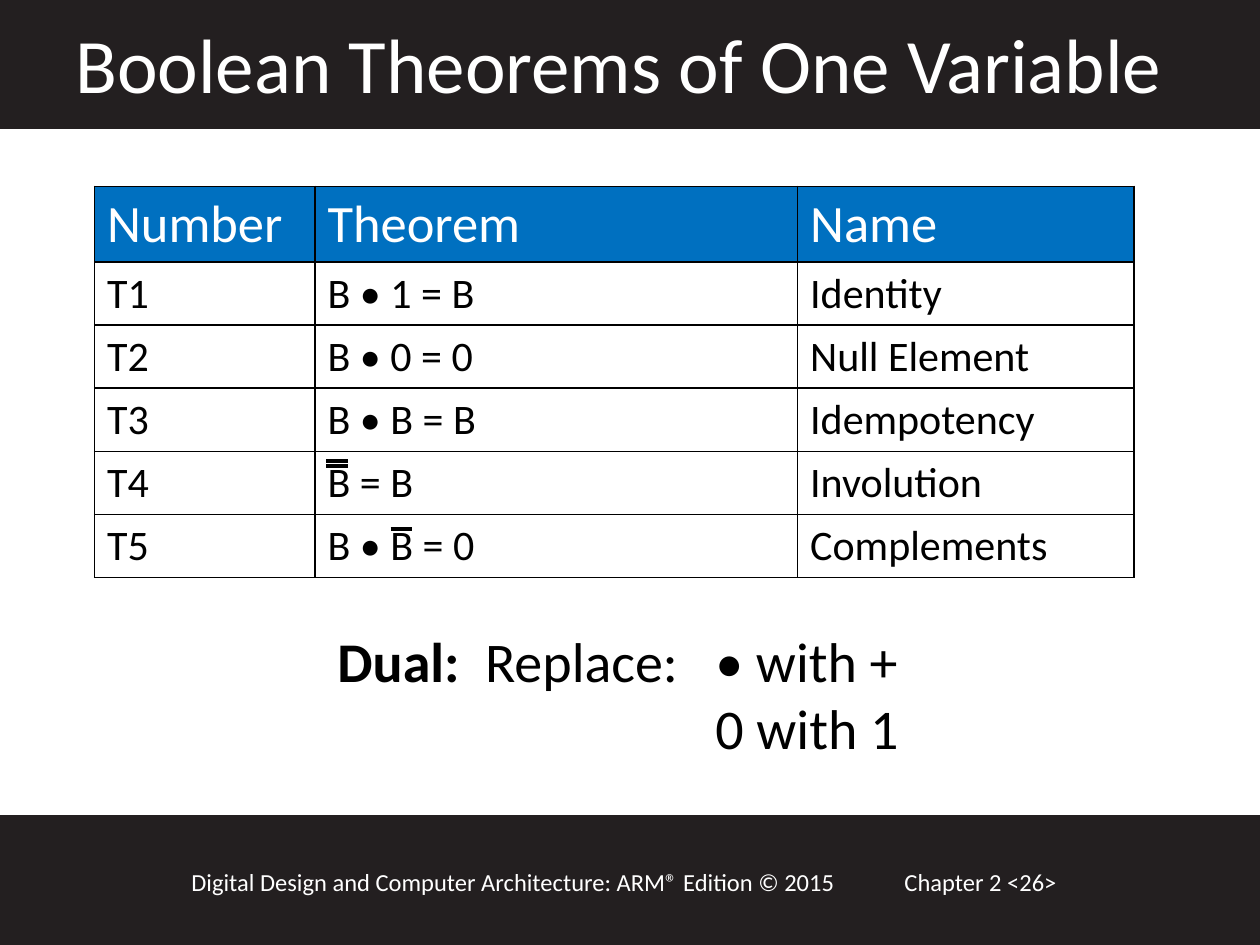
from lxml import etree
from pptx import Presentation
from pptx import util as u
from pptx.dml.color import RGBColor
from pptx.enum import shapes, text
from pptx.oxml import ns

WIDTH, HEIGHT = u.Inches(10), u.Inches(7.5)
FONT = "Calibri"
BLACK, WHITE, BAND, HEADER = "000000", "FFFFFF", "231F20", "0070C0"
THEOREMS = [
    ("Number", "Theorem", "Name"),
    ("T1", "B • 1 = B", "Identity"),
    ("T2", "B • 0 = 0", "Null Element"),
    ("T3", "B • B = B", "Idempotency"),
    ("T4", "B = B", "Involution"),
    ("T5", "B • B = 0", "Complements"),
]


def color(value):
    """Turn a hex string into a colour."""
    return RGBColor.from_string(value)


def across(percent):
    """Give a share of the slide width."""
    return u.Emu(round(WIDTH * percent / 100))


def down(percent):
    """Give a share of the slide height."""
    return u.Emu(round(HEIGHT * percent / 100))


def area(left, top, width, height):
    """Turn slide percentages into a position and size."""
    return across(left), down(top), across(width), down(height)


def style(paragraph, size, ink):
    """Format every run of a paragraph."""
    for run in paragraph.runs:
        run.font.name = FONT
        run.font.size = u.Pt(size)
        run.font.bold = False
        run.font.color.rgb = color(ink)


def add_band(slide, top, height):
    """Add a dark band over the full slide width."""
    band = slide.shapes.add_shape(shapes.MSO_SHAPE.RECTANGLE, *area(0, top, 100, height))
    band.shadow.inherit = False
    band.fill.solid()
    band.fill.fore_color.rgb = color(BAND)
    band.line.color.rgb = color(BAND)
    band.line.width = u.Pt(2)


def add_text(slide, place, wording, size, ink=WHITE):
    """Add a wrapped text box and return its paragraphs."""
    frame = slide.shapes.add_textbox(*area(*place)).text_frame
    frame.word_wrap = True
    frame.auto_size = text.MSO_AUTO_SIZE.SHAPE_TO_FIT_TEXT
    frame.text = wording
    for paragraph in frame.paragraphs:
        style(paragraph, size, ink)
    return frame.paragraphs


def add_borders(cell):
    """Draw a thin black line on all four sides of a cell."""
    properties = cell._tc.get_or_add_tcPr()
    for side in ("a:lnL", "a:lnR", "a:lnT", "a:lnB"):
        border = etree.SubElement(properties, ns.qn(side), w=str(u.Pt(1)))
        fill = etree.SubElement(border, ns.qn("a:solidFill"))
        etree.SubElement(fill, ns.qn("a:srgbClr"), val=BLACK)


def add_theorems(slide):
    """Add the table of theorems."""
    table = slide.shapes.add_table(
        len(THEOREMS), 3, *area(7.5, 19.73, 82.5, 41.33)).table
    table.first_row = table.horz_banding = False
    for column, share in zip(table.columns, (17.5, 38.3, 26.7)):
        column.width = across(share)
    for index, (row, entries) in enumerate(zip(table.rows, THEOREMS)):
        height, size, ink, fill = (6.67, 24, BLACK, WHITE) if index else (8, 30, WHITE, HEADER)
        row.height = down(height)
        for cell, entry in zip(row.cells, entries):
            cell.text = entry
            style(cell.text_frame.paragraphs[0], size, ink)
            add_borders(cell)
            cell.fill.solid()
            cell.fill.fore_color.rgb = color(fill)


def add_dual(slide):
    """Add the duality rule with its replacements aligned at a tab."""
    rule = add_text(slide, (25.8, 65.6, 48, 15.73), "\t• with +\n\t0 with 1", 32, BLACK)
    for paragraph in rule:
        tabs = etree.SubElement(paragraph._p.get_or_add_pPr(), ns.qn("a:tabLst"))
        etree.SubElement(tabs, ns.qn("a:tab"), pos=str(across(30)), algn="l")
    replacement = rule[0].runs[0]
    replacement.text = "Dual:"
    rule[0].add_run().text = "  Replace:\t• with +"
    style(rule[0], 32, BLACK)
    replacement.font.bold = True


def add_overbar(slide, left, top):
    """Draw a complement bar above a variable."""
    bar = slide.shapes.add_connector(
        shapes.MSO_CONNECTOR.STRAIGHT,
        across(left), down(top), across(left + 1.7), down(top))
    bar.line.color.rgb = color(BLACK)
    bar.line.width = u.Pt(2)
    etree.SubElement(bar._element.spPr, ns.qn("a:effectLst"))


def main():
    """Build and save the slide."""
    deck = Presentation()
    deck.slide_width, deck.slide_height = WIDTH, HEIGHT
    slide = deck.slides.add_slide(deck.slide_layouts[6])
    add_band(slide, 86.4, 13.6)
    add_band(slide, 0, 13.47)
    add_text(slide, (70.8, 91.07, 21.7, 4.53), "Chapter 2 <26>", 14)
    add_text(slide, (14.2, 91.07, 57.5, 4.53),
             "Digital Design and Computer Architecture: ARM® Edition © 2015", 14)
    add_text(slide, (5, 1.07, 90, 11.2), "Boolean Theorems of One Variable", 44)
    add_theorems(slide)
    add_dual(slide)
    for left, top in ((31, 56), (25.9, 49.33), (25.9, 48.8)):
        add_overbar(slide, left, top)
    deck.save("out.pptx")


if __name__ == "__main__":
    main()
